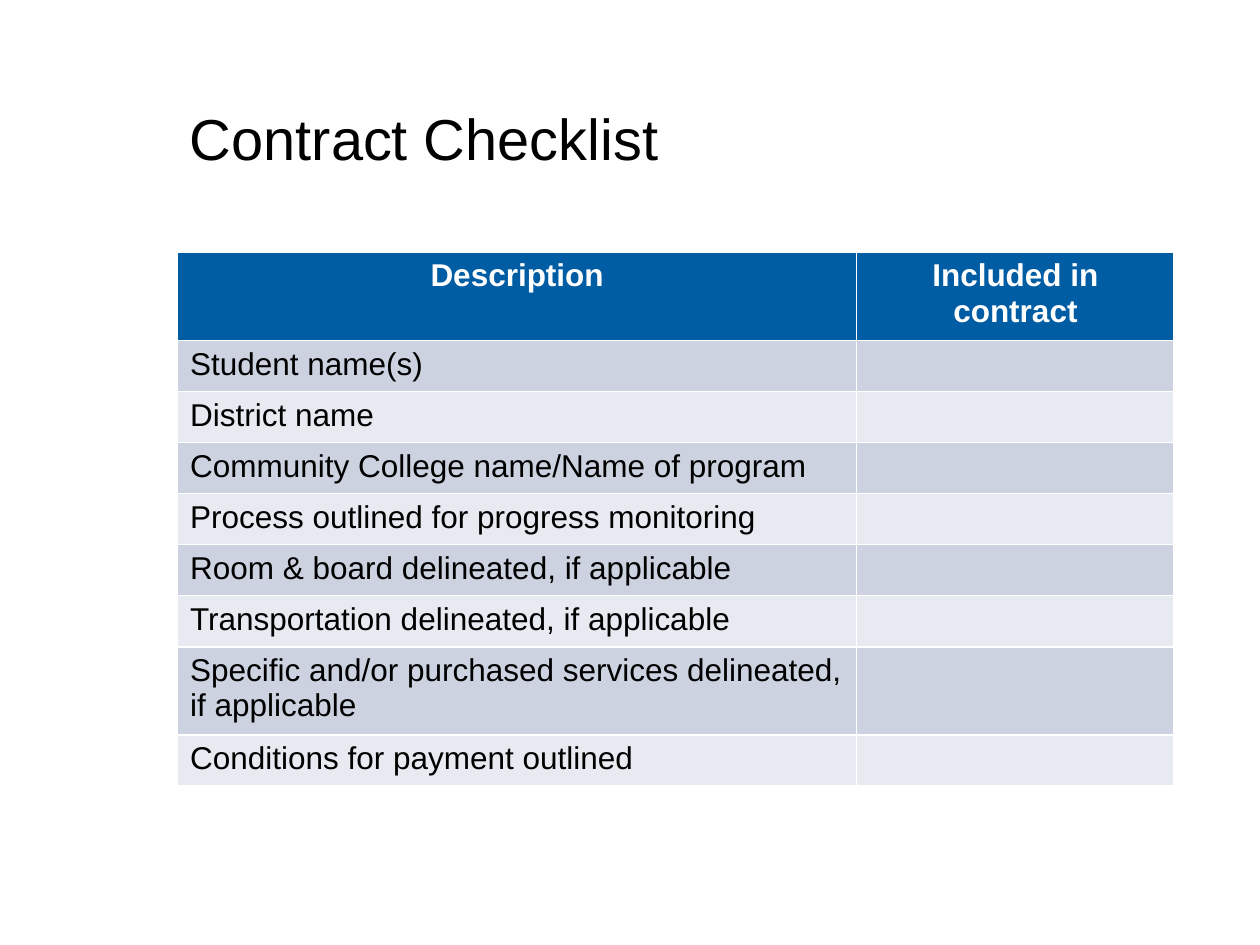
"""Build the contract checklist slide with its two-column table."""
from pptx import Presentation
from pptx.dml.color import RGBColor
from pptx.enum import text
from pptx.util import Cm, Pt

TITLE = "Contract Checklist"
HEADERS = ["Description", "Included in contract"]
REQUIREMENTS = [
    "Student name(s)",
    "District name",
    "Community College name/Name of program",
    "Process outlined for progress monitoring",
    "Room & board delineated, if applicable",
    "Transportation delineated, if applicable",
    "Specific and/or purchased services delineated, if applicable",
    "Conditions for payment outlined",
]

FONT = "Arial"
BLACK = RGBColor(0x00, 0x00, 0x00)
WHITE = RGBColor(0xFF, 0xFF, 0xFF)
HEADER_BLUE = RGBColor(0x00, 0x5C, 0xA3)
BANDS = [RGBColor(0xCC, 0xD2, 0xE0), RGBColor(0xE7, 0xEA, 0xF0)]

LEFT = Cm(3.58)
COLUMN_WIDTHS = [Cm(13.69), Cm(6.4)]
WIDTH = sum(COLUMN_WIDTHS)
ROW_HEIGHT = Cm(1.03)


def style_font(font, size, color, bold=False):
    font.name = FONT
    font.size = Pt(size)
    font.color.rgb = color
    font.bold = bold


def add_title(slide):
    box = slide.shapes.add_textbox(LEFT, Cm(1.02), WIDTH, Cm(3.68))
    frame = box.text_frame
    frame.word_wrap = True
    frame.vertical_anchor = text.MSO_ANCHOR.MIDDLE
    paragraph = frame.paragraphs[0]
    paragraph.line_spacing = 0.9
    run = paragraph.add_run()
    run.text = TITLE
    style_font(run.font, 33, BLACK)


def fill_cell(cell, content, row):
    is_header = row == 0
    cell.fill.solid()
    cell.fill.fore_color.rgb = HEADER_BLUE if is_header else BANDS[(row - 1) % 2]
    if not content:
        return
    paragraph = cell.text_frame.paragraphs[0]
    if is_header:
        paragraph.alignment = text.PP_ALIGN.CENTER
    run = paragraph.add_run()
    run.text = content
    style_font(run.font, 18, WHITE if is_header else BLACK, is_header)


def add_checklist(slide):
    rows = [HEADERS] + [[requirement, ""] for requirement in REQUIREMENTS]
    shape = slide.shapes.add_table(
        len(rows), len(HEADERS), LEFT, Cm(5.08), WIDTH, ROW_HEIGHT * len(rows))
    table = shape.table
    for column, width in zip(table.columns, COLUMN_WIDTHS):
        column.width = width
    for row, contents in enumerate(rows):
        table.rows[row].height = ROW_HEIGHT
        for column, content in enumerate(contents):
            fill_cell(table.cell(row, column), content, row)


def main():
    presentation = Presentation()
    presentation.slide_width, presentation.slide_height = Cm(25.4), Cm(19.05)
    slide = presentation.slides.add_slide(presentation.slide_layouts[6])
    add_title(slide)
    add_checklist(slide)
    presentation.save("out.pptx")


if __name__ == "__main__":
    main()
